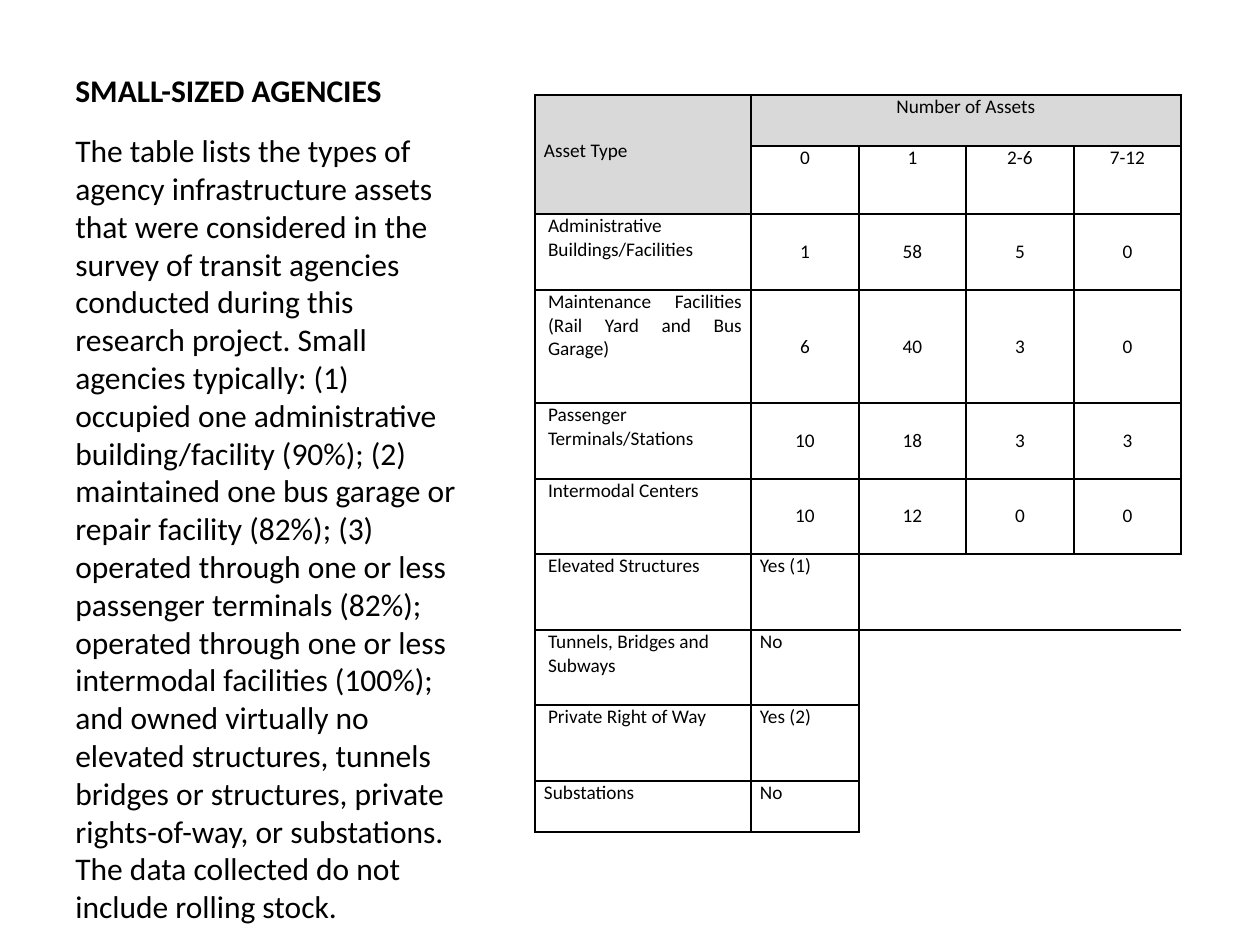
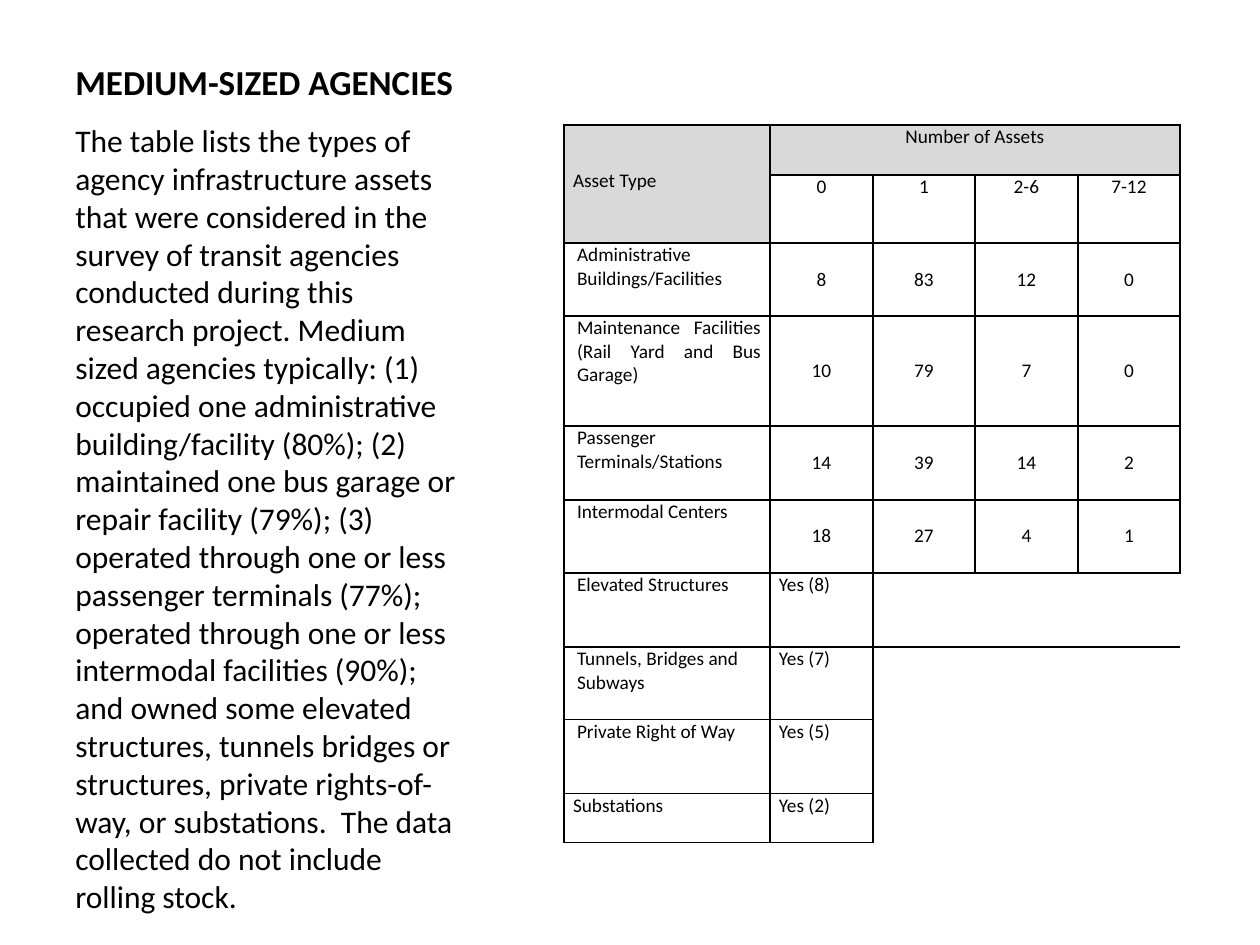
from dataclasses import dataclass

from lxml import etree
from pptx import Presentation
from pptx.dml.color import RGBColor
from pptx.enum.text import MSO_ANCHOR, PP_ALIGN
from pptx.oxml.ns import qn
from pptx.util import Emu, Pt

LEFT, CENTER, JUSTIFY = PP_ALIGN.LEFT, PP_ALIGN.CENTER, PP_ALIGN.JUSTIFY
TOP, MIDDLE, BOTTOM = MSO_ANCHOR.TOP, MSO_ANCHOR.MIDDLE, MSO_ANCHOR.BOTTOM

BLACK = RGBColor(0x00, 0x00, 0x00)
GREY = RGBColor(0xD9, 0xD9, 0xD9)
FONT = "Calibri"
BODY_SIZE, CELL_SIZE, BORDER_PT = 18, 11, 1
PX_PER_INCH = 126
TEXT_LEFT, TEXT_WIDTH, TITLE_TOP = 63, 415, 38
CELL_INSET, LABEL_INSET, ASSET_TYPE_DROP = 9, 13, 44
NO_STYLE = "{2D5ABB26-0587-4C30-8999-92F81FD0307C}"
HEADER_ROWS = 2
COUNT_HEADINGS = ("0", "1", "2-6", "7-12")


@dataclass(frozen=True)
class AssetLabel:
    text: str
    align: PP_ALIGN = LEFT
    inset: int = LABEL_INSET


@dataclass(frozen=True)
class AgencySlide:
    title: str
    title_size: int
    title_height: int
    body: str
    body_top: int
    body_height: int
    table_left: int
    table_top: int
    cols: tuple[int, ...]
    rows: tuple[int, ...]
    counts: tuple[tuple[int, ...], ...]
    answers: tuple[str, ...]


COUNTED = (
    AssetLabel("Administrative Buildings/Facilities", JUSTIFY),
    AssetLabel("Maintenance Facilities (Rail Yard and Bus Garage)", JUSTIFY),
    AssetLabel("Passenger Terminals/Stations", JUSTIFY),
    AssetLabel("Intermodal Centers"),
)
ANSWERED = (
    AssetLabel("Elevated Structures"),
    AssetLabel("Tunnels, Bridges and Subways"),
    AssetLabel("Private Right of Way"),
    AssetLabel("Substations", inset=CELL_INSET),
)
FIRST_ANSWER_ROW = HEADER_ROWS + len(COUNTED)

BODY = (
    "The table lists the types of agency infrastructure assets that were "
    "considered in the survey of transit agencies conducted during this "
    "research project. {size} agencies typically: (1) occupied one "
    "administrative building/facility ({admin}%); (2) maintained one bus "
    "garage or repair facility ({repair}%); (3) operated through one or less "
    "passenger terminals ({terminals}%); operated through one or less "
    "intermodal facilities ({intermodal}%); and owned {owned} elevated "
    "structures, tunnels bridges or structures, private rights-of-way, or "
    "substations.{gap}The data collected do not include rolling stock."
)

SLIDES = (
    AgencySlide(
        title="SMALL-SIZED AGENCIES", title_size=18, title_height=77,
        body=BODY.format(size="Small", admin=90, repair=82, terminals=82,
                         intermodal=100, owned="virtually no", gap=" "),
        body_top=125, body_height=791,
        table_left=535, table_top=95,
        cols=(216, 108, 107, 108, 107),
        rows=(51, 68, 76, 113, 76, 75, 76, 75, 76, 51),
        counts=((1, 58, 5, 0), (6, 40, 3, 0), (10, 18, 3, 3), (10, 12, 0, 0)),
        answers=("Yes (1)", "No", "Yes (2)", "No"),
    ),
    AgencySlide(
        title="MEDIUM-SIZED AGENCIES", title_size=20, title_height=71,
        body=BODY.format(size="Medium sized", admin=80, repair=79, terminals=77,
                         intermodal=90, owned="some", gap="  "),
        body_top=115, body_height=782,
        table_left=564, table_top=125,
        cols=(206, 103, 102, 103, 102),
        rows=(50, 68, 73, 110, 74, 73, 74, 73, 74, 49),
        counts=((8, 83, 12, 0), (10, 79, 7, 0), (14, 39, 14, 2), (18, 27, 4, 1)),
        answers=("Yes (8)", "Yes (7)", "Yes (5)", "Yes (2)"),
    ),
)


def px(n: int) -> Emu:
    return Emu(round(n * 914400 / PX_PER_INCH))


def write(tf, text: str, *, size: int = CELL_SIZE, bold: bool = False,
          align: PP_ALIGN = LEFT) -> None:
    p = tf.paragraphs[0]
    p.alignment = align
    r = p.add_run()
    r.text = text
    r.font.name = FONT
    r.font.size = Pt(size)
    r.font.bold = bold
    r.font.color.rgb = BLACK


def add_text(s, top: int, height: int, text: str, *, size: int,
             bold: bool = False, anchor: MSO_ANCHOR = TOP) -> None:
    tf = s.shapes.add_textbox(px(TEXT_LEFT), px(top), px(TEXT_WIDTH), px(height)).text_frame
    tf.word_wrap = True
    tf.vertical_anchor = anchor
    write(tf, text, size=size, bold=bold)


def add_borders(cell, edges: str) -> None:
    tc_pr = cell._tc.get_or_add_tcPr()
    for edge in edges:
        ln = etree.SubElement(tc_pr, qn(f"a:ln{edge}"), w=str(Pt(BORDER_PT)))
        fill = etree.SubElement(ln, qn("a:solidFill"))
        etree.SubElement(fill, qn("a:srgbClr"), val=str(BLACK))


def fill_cell(cell, text: str, *, align: PP_ALIGN = LEFT, anchor: MSO_ANCHOR = TOP,
              inset: int = CELL_INSET) -> None:
    cell.margin_left = px(inset)
    cell.vertical_anchor = anchor
    write(cell.text_frame, text, align=align)


def format_cells(table) -> None:
    for row in range(len(table.rows)):
        for col in range(len(table.columns)):
            cell = table.cell(row, col)
            cell.margin_left = cell.margin_right = px(CELL_INSET)
            cell.margin_top = cell.margin_bottom = 0
            is_open = row >= FIRST_ANSWER_ROW and col > 1
            if not cell.is_spanned:
                if not is_open:
                    add_borders(cell, "LRTB")
                else:
                    add_borders(cell, "LT" if row == FIRST_ANSWER_ROW else "L")
            cell.fill.background()


def add_asset_table(s, spec_: AgencySlide) -> None:
    table = s.shapes.add_table(
        len(spec_.rows), len(spec_.cols), px(spec_.table_left), px(spec_.table_top),
        px(sum(spec_.cols)), px(sum(spec_.rows))).table
    table._tbl.tblPr.find(qn("a:tableStyleId")).text = NO_STYLE
    table.first_row = table.horz_banding = False
    for column, width in zip(table.columns, spec_.cols):
        column.width = px(width)
    for row, height in zip(table.rows, spec_.rows):
        row.height = px(height)

    last_col = len(spec_.cols) - 1
    asset_type, number = table.cell(0, 0), table.cell(0, 1)
    asset_type.merge(table.cell(1, 0))
    number.merge(table.cell(0, last_col))
    for row in range(FIRST_ANSWER_ROW, len(spec_.rows)):
        table.cell(row, 2).merge(table.cell(row, last_col))
    format_cells(table)

    for heading in (asset_type, number):
        heading.fill.solid()
        heading.fill.fore_color.rgb = GREY
    fill_cell(asset_type, "Asset Type", align=JUSTIFY)
    asset_type.margin_top = px(ASSET_TYPE_DROP)
    fill_cell(number, "Number of Assets", align=CENTER)
    for col, text in enumerate(COUNT_HEADINGS, 1):
        fill_cell(table.cell(1, col), text, align=CENTER)

    for row, label in enumerate(COUNTED + ANSWERED, HEADER_ROWS):
        fill_cell(table.cell(row, 0), label.text, align=label.align, inset=label.inset)
    for row, counts in enumerate(spec_.counts, HEADER_ROWS):
        for col, count in enumerate(counts, 1):
            fill_cell(table.cell(row, col), str(count), align=CENTER, anchor=MIDDLE)
    for row, answer in enumerate(spec_.answers, FIRST_ANSWER_ROW):
        fill_cell(table.cell(row, 1), answer)


def main() -> None:
    prs = Presentation()
    prs.slide_width, prs.slide_height = px(1260), px(945)
    for agency in SLIDES:
        s = prs.slides.add_slide(prs.slide_layouts[6])
        add_text(s, TITLE_TOP, agency.title_height, agency.title,
                 size=agency.title_size, bold=True, anchor=BOTTOM)
        add_text(s, agency.body_top, agency.body_height, agency.body, size=BODY_SIZE)
        add_asset_table(s, agency)
    prs.save("out.pptx")


if __name__ == "__main__":
    main()
